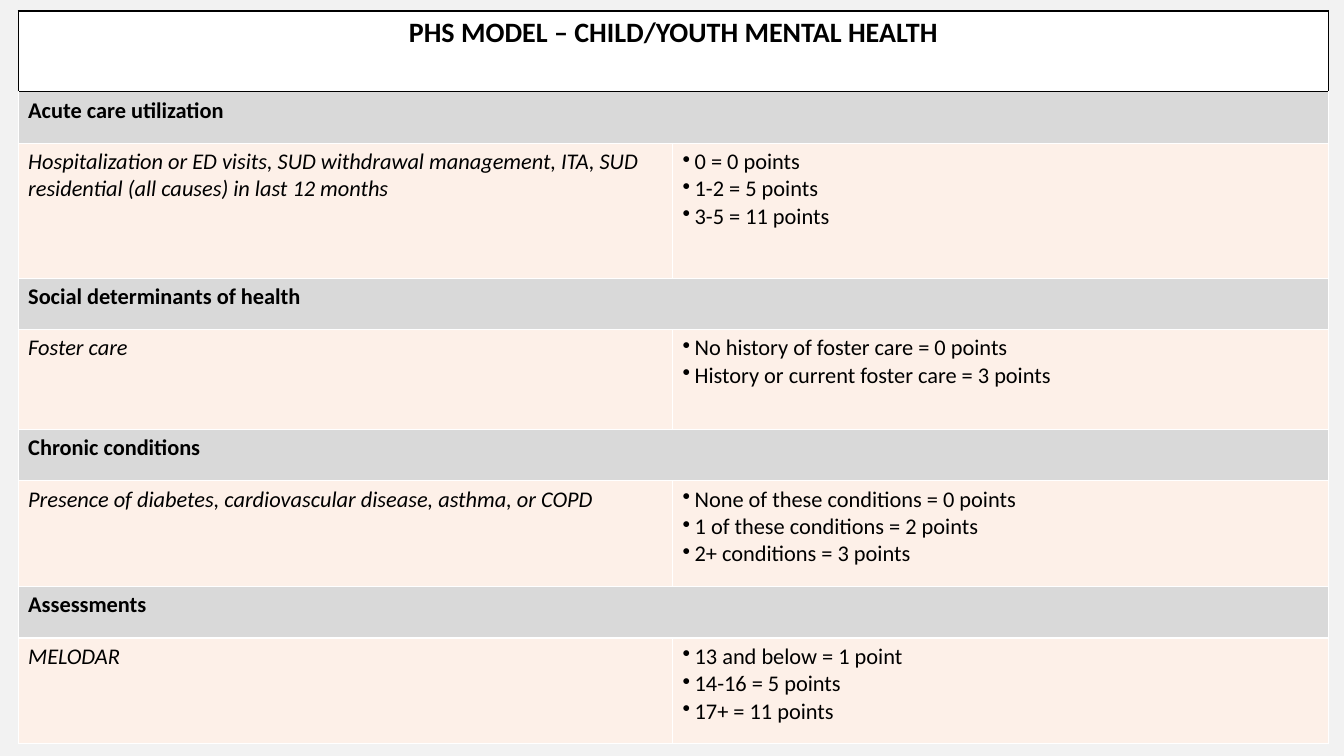
from pptx import Presentation
from pptx.dml.color import RGBColor
from pptx.enum.text import PP_ALIGN as Align
from pptx.oxml import parse_xml
from pptx.oxml.ns import nsdecls
from pptx.util import Inches, Pt

WIDE, HIGH = 13.33, 7.5
BLACK, WHITE, GREY, PEACH = "000000", "FFFFFF", "D9D9D9", "FDF0E8"
COLS = [6.49, 6.51]
TITLE_H, HEAD_H = 0.8, 0.51
TITLE = "PHS MODEL – CHILD/YOUTH MENTAL HEALTH"

# Heading, measure, scores, height of the score row
GROUPS = [
    ("Acute care utilization",
     "Hospitalization or ED visits, SUD withdrawal management, ITA, SUD "
     "residential (all causes) in last 12 months",
     ["0 = 0 points", "1-2 = 5 points", "3-5 = 11 points"], 1.34),
    ("Social determinants of health", "Foster care",
     ["No history of foster care = 0 points",
      "History or current foster care = 3 points"], 0.99),
    ("Chronic conditions",
     "Presence of diabetes, cardiovascular disease, asthma, or COPD",
     ["None of these conditions = 0 points", "1 of these conditions = 2 points",
      "2+ conditions = 3 points"], 1.05),
    ("Assessments", "MELODAR",
     ["13 and below = 1 point", "14-16 = 5 points", "17+ = 11 points"], 1.05),
]


def color(code):
    return RGBColor.from_string(code)


def paint(cell, fill, edges):
    """Fill a cell and draw its left, right, top and bottom edges."""
    cell.fill.solid()
    cell.fill.fore_color.rgb = color(fill)
    props = cell._tc.get_or_add_tcPr()
    for spot, (side, code) in enumerate(zip("LRTB", edges)):
        props.insert(spot, parse_xml(
            f'<a:ln{side} {nsdecls("a")} w="12700"><a:solidFill>'
            f'<a:srgbClr val="{code}"/></a:solidFill></a:ln{side}>'))


def write(cell, lines, size=16, align=Align.LEFT, bullet=False, **style):
    """Put one paragraph per line in a cell."""
    cell.text_frame.text = "\n".join(lines)
    look = {"name": "Calibri", "size": Pt(size), "bold": False,
            "italic": False} | style
    for para in cell.text_frame.paragraphs:
        para.alignment = align
        font = para.runs[0].font
        for key, value in look.items():
            setattr(font, key, value)
        font.color.rgb = color(BLACK)
        if bullet:
            props = para._p.get_or_add_pPr()
            props.set("marL", str(Inches(0.12)))
            props.set("indent", str(-Inches(0.12)))
            props.append(parse_xml(f'<a:buChar {nsdecls("a")} char="•"/>'))


def band(table, row, text, fill, edges, **style):
    """Write a row that spans both columns."""
    left, right = table.cell(row, 0), table.cell(row, 1)
    left.merge(right)
    for cell in (left, right):
        paint(cell, fill, edges)
    write(left, [text], bold=True, **style)


def score_table(slide, x, y):
    heights = [TITLE_H]
    for *_, high in GROUPS:
        heights += [HEAD_H, high]
    frame = slide.shapes.add_table(
        len(heights), len(COLS), Inches(x), Inches(y),
        Inches(sum(COLS)), Inches(sum(heights)))
    table = frame.table
    table.first_row = table.horz_banding = False
    for col, width in zip(table.columns, COLS):
        col.width = Inches(width)
    for row, high in zip(table.rows, heights):
        row.height = Inches(high)

    # Title row
    band(table, 0, TITLE, WHITE, [BLACK] * 4, size=20, align=Align.CENTER)

    # Heading row and score row of each group
    for num, (head, measure, scores, _) in enumerate(GROUPS):
        row = 2 * num + 1
        top = WHITE if num else BLACK
        band(table, row, head, GREY, [WHITE, WHITE, top, WHITE])
        left, right = table.cell(row + 1, 0), table.cell(row + 1, 1)
        for cell in (left, right):
            paint(cell, PEACH, [WHITE] * 4)
        write(left, [measure], italic=True)
        write(right, scores, bullet=True)


def main():
    deck = Presentation()
    deck.slide_width, deck.slide_height = Inches(WIDE), Inches(HIGH)
    slide = deck.slides.add_slide(deck.slide_layouts[6])
    back = slide.background.fill
    back.solid()
    back.fore_color.rgb = color("F2F2F2")
    score_table(slide, 0.18, 0.11)
    deck.save("out.pptx")


if __name__ == "__main__":
    main()
